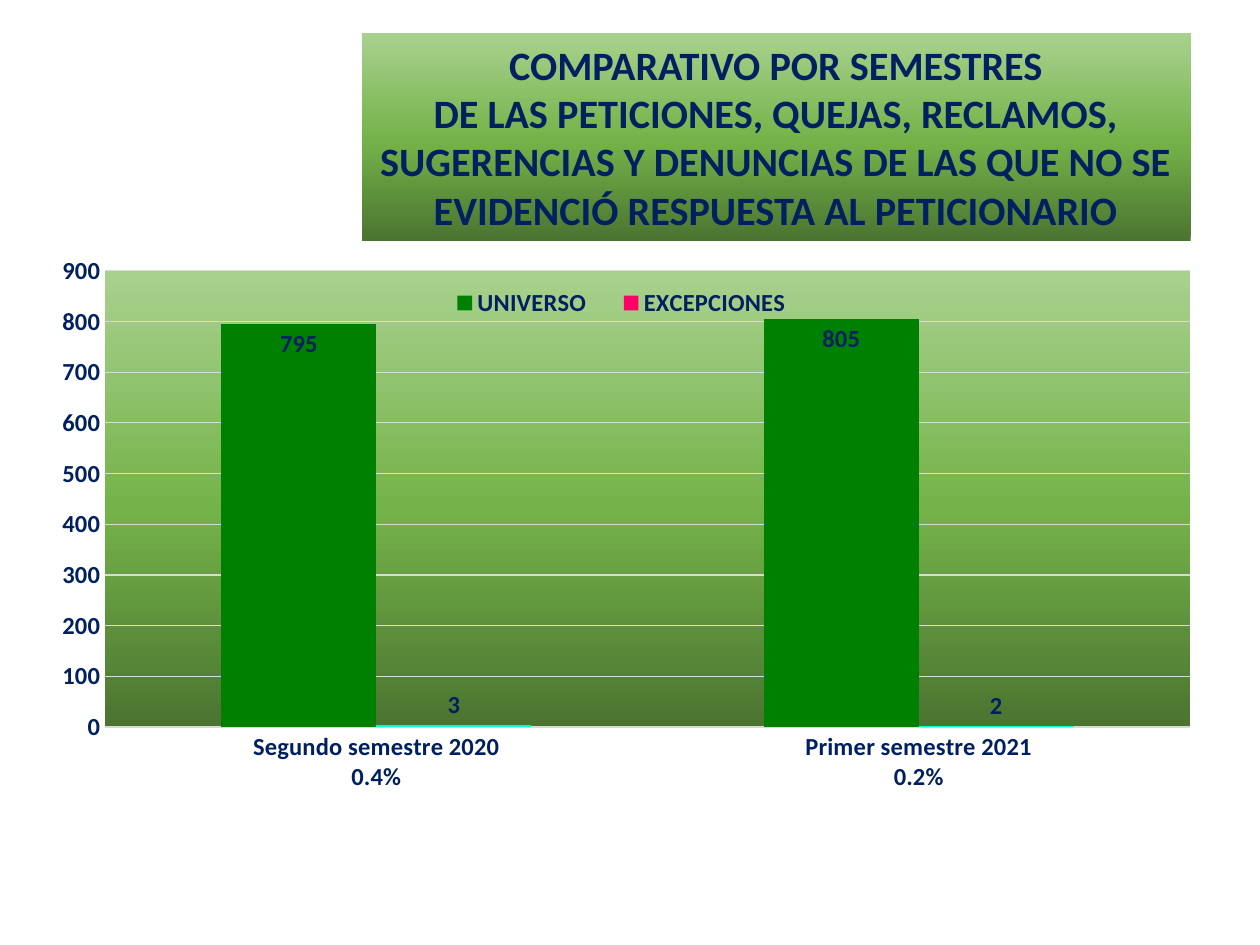
from pptx import Presentation
from pptx.chart.data import CategoryChartData
from pptx.dml.color import RGBColor
from pptx.enum.chart import XL_CHART_TYPE as ChartType, XL_LABEL_POSITION as LabelPos
from pptx.enum.chart import XL_LEGEND_POSITION as LegendPos, XL_TICK_MARK as TickMark
from pptx.enum.shapes import MSO_SHAPE as Shape
from pptx.enum.text import MSO_ANCHOR as Anchor, PP_ALIGN as Align
from pptx.oxml import parse_xml
from pptx.oxml.ns import nsdecls, qn
from pptx.util import Inches, Pt

NAVY = RGBColor(0x00, 0x20, 0x60)
GREEN = RGBColor(0x00, 0x80, 0x00)
PINK = RGBColor(0xFF, 0x00, 0x66)
AQUA = RGBColor(0x00, 0xFF, 0xCC)
GRID_GREY = RGBColor(0xD9, 0xD9, 0xD9)
GREEN_FADE = [
    (0, RGBColor(0x4B, 0x74, 0x30)),
    (48, RGBColor(0x74, 0xB3, 0x49)),
    (100, RGBColor(0xA9, 0xD1, 0x8E)),
]


def green_gradient():
    """Return a gradFill element, dark at the bottom and light at the top."""
    stops = "".join(
        f'<a:gs pos="{pos * 1000}"><a:srgbClr val="{color}"/></a:gs>'
        for pos, color in GREEN_FADE
    )
    return parse_xml(
        f'<a:gradFill {nsdecls("a")} rotWithShape="1"><a:gsLst>{stops}</a:gsLst>'
        '<a:lin ang="16200000" scaled="0"/></a:gradFill>'
    )


def set_layout(element, index, target, box):
    """Fix a chart part at box, given as shares (x, y, w, h) of the chart."""
    for old in element.findall(qn("c:layout")):
        element.remove(old)
    target_xml = f'<c:layoutTarget val="{target}"/>' if target else ""
    modes = '<c:xMode val="edge"/><c:yMode val="edge"/>'
    sizes = "".join(f'<c:{key} val="{share}"/>' for key, share in zip("xywh", box))
    element.insert(index, parse_xml(
        f'<c:layout {nsdecls("c")}><c:manualLayout>{target_xml}{modes}{sizes}'
        '</c:manualLayout></c:layout>'
    ))


prs = Presentation()
prs.slide_width, prs.slide_height = Inches(10), Inches(7.5)
slide = prs.slides.add_slide(prs.slide_layouts[6])

# Title banner
banner = slide.shapes.add_shape(
    Shape.RECTANGLE, Inches(2.87), Inches(0.26), Inches(6.58), Inches(1.65))
banner.shadow.inherit = False
banner.line.fill.background()
banner.fill.background()
banner_props = banner._element.spPr
banner_props.replace(banner_props.find(qn("a:noFill")), green_gradient())
title = banner.text_frame
title.word_wrap = True
title.vertical_anchor = Anchor.MIDDLE
title.text = (
    "COMPARATIVO POR SEMESTRES\n"
    "DE LAS PETICIONES, QUEJAS, RECLAMOS, SUGERENCIAS Y DENUNCIAS "
    "DE LAS QUE NO SE EVIDENCIÓ RESPUESTA AL PETICIONARIO"
)
for paragraph in title.paragraphs:
    paragraph.alignment = Align.CENTER
    for run in paragraph.runs:
        run.font.name, run.font.size, run.font.bold = "Calibri", Pt(23), True
        run.font.color.rgb = NAVY

# Comparison chart
semesters = CategoryChartData()
semesters.categories = ["Segundo semestre 2020\n0.4%", "Primer semestre 2021\n0.2%"]
semesters.add_series("UNIVERSO", (795, 805))
semesters.add_series("EXCEPCIONES", (3, 2))
chart = slide.shapes.add_chart(
    ChartType.COLUMN_CLUSTERED, Inches(0.42), Inches(2.03), Inches(9.03), Inches(4.39),
    semesters).chart
chart.has_title = False
chart.font.name, chart.font.size, chart.font.bold = "Calibri", Pt(14), True
chart.font.color.rgb = NAVY

plot = chart.plots[0]
plot.gap_width, plot.overlap = 150, 0
plot.vary_by_categories = False
styles = [(GREEN, GREEN, LabelPos.INSIDE_END), (PINK, AQUA, LabelPos.OUTSIDE_END)]
for series, (key_color, bar_color, label_position) in zip(plot.series, styles):
    series.invert_if_negative = False
    series.format.fill.solid()
    series.format.fill.fore_color.rgb = key_color
    for i in range(len(series.values)):
        bar_fill = series.points[i].format.fill
        bar_fill.solid()
        bar_fill.fore_color.rgb = bar_color
    labels = series.data_labels
    labels.show_value = True
    labels.position = label_position
    labels.font.name, labels.font.size, labels.font.bold = "Calibri", Pt(14), True
    labels.font.color.rgb = NAVY

for axis in (chart.category_axis, chart.value_axis):
    axis.major_tick_mark = axis.minor_tick_mark = TickMark.NONE
    axis.format.line.fill.background()
    font = axis.tick_labels.font
    font.name, font.size, font.bold = "Calibri", Pt(14), True
    font.color.rgb = NAVY
counts = chart.value_axis
counts.minimum_scale, counts.maximum_scale, counts.major_unit = 0, 900, 100
counts.major_gridlines.format.line.color.rgb = GRID_GREY
counts.major_gridlines.format.line.width = Pt(0.75)

chart.has_legend = True
legend = chart.legend
legend.position = LegendPos.TOP
legend.include_in_layout = False
legend.font.name, legend.font.size, legend.font.bold = "Calibri", Pt(14), True
legend.font.color.rgb = NAVY
set_layout(legend._element, 1, None, (0.33, 0.05, 0.34, 0.07))

plot_area = chart._chartSpace.chart.plotArea
set_layout(plot_area, 0, "inner", (0.046, 0.027, 0.954, 0.825))
plot_props = parse_xml(f'<c:spPr {nsdecls("c", "a")}/>')
plot_props.append(green_gradient())
plot_area.append(plot_props)

prs.save("out.pptx")
